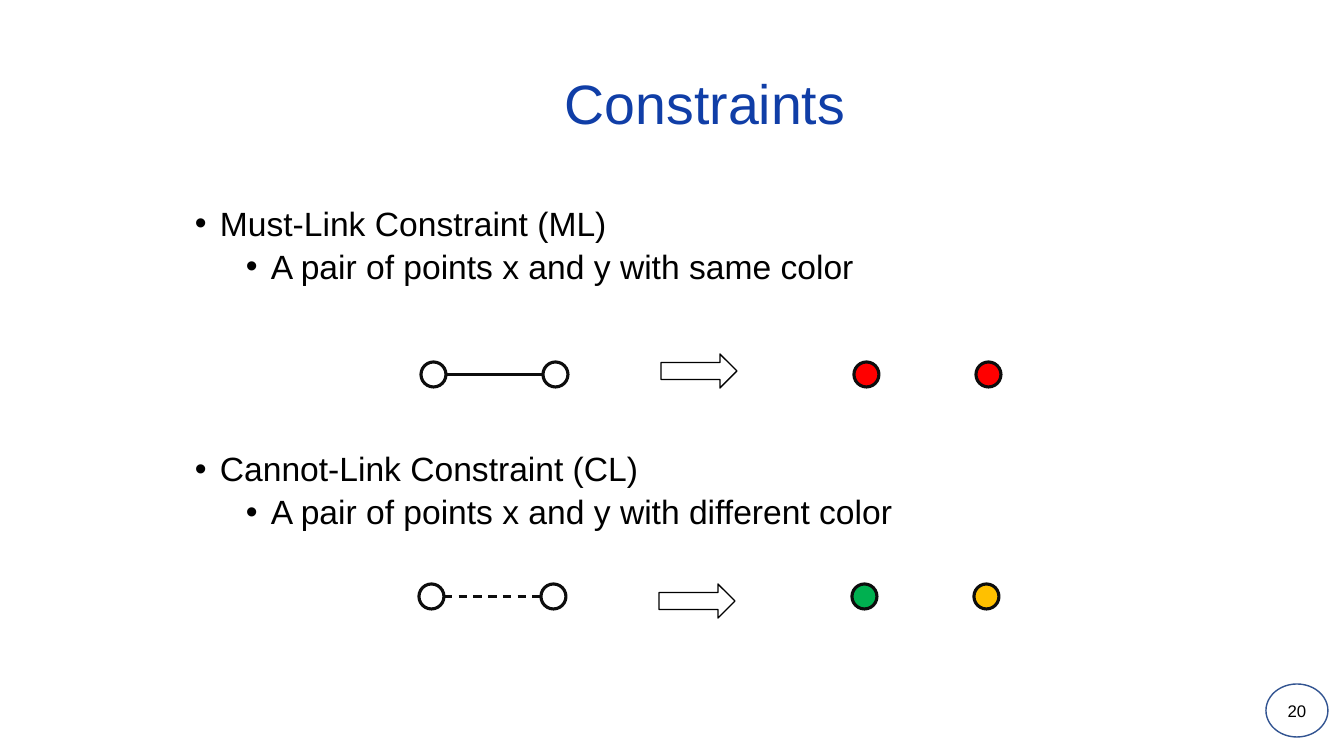
from lxml import etree
from pptx import Presentation
from pptx.dml.color import RGBColor
from pptx.enum.dml import MSO_LINE
from pptx.enum.shapes import MSO_CONNECTOR, MSO_SHAPE
from pptx.enum.text import MSO_ANCHOR, MSO_AUTO_SIZE, PP_ALIGN
from pptx.oxml.ns import qn
from pptx.util import Emu, Pt

ELLIPSE = MSO_SHAPE.OVAL
ARROW = MSO_SHAPE.RIGHT_ARROW
STRAIGHT = MSO_CONNECTOR.STRAIGHT
DASH = MSO_LINE.DASH
MIDDLE = MSO_ANCHOR.MIDDLE
CENTER = PP_ALIGN.CENTER
LEFT = PP_ALIGN.LEFT
FIXED_SIZE = MSO_AUTO_SIZE.NONE

PIXELS_PER_INCH = 100.8
BLACK = "000000"
WHITE = "FFFFFF"
OUTLINE = "0D0D0D"
POINT_SIZE = 25
POINT_PITCH = 122


def px(length):
    return Emu(round(length * 914400 / PIXELS_PER_INCH))


def color(value):
    return RGBColor.from_string(value)


def add_bullet(paragraph, indent):
    properties = paragraph._p.get_or_add_pPr()
    properties.set("marL", str(px(indent)))
    properties.set("indent", str(-px(25)))
    etree.SubElement(properties, qn("a:buFont")).set("typeface", "Arial")
    etree.SubElement(properties, qn("a:buChar")).set("char", "•")


def write(paragraph, text, size=24, fill=BLACK, align=LEFT, before=0, spacing=0.9, indent=None):
    paragraph.alignment = align
    paragraph.line_spacing = spacing
    paragraph.space_before = Pt(before)
    if indent is not None:
        add_bullet(paragraph, indent)
    run = paragraph.add_run()
    run.text = text
    run.font.name = "Arial"
    run.font.size = Pt(size)
    run.font.color.rgb = color(fill)


def add_outlined(slide, kind, box, fill=None, line=OUTLINE, width=2.25):
    shape = slide.shapes.add_shape(kind, *map(px, box))
    shape.shadow.inherit = False
    if fill:
        shape.fill.solid()
        shape.fill.fore_color.rgb = color(fill)
    else:
        shape.fill.background()
    shape.line.color.rgb = color(line)
    shape.line.width = Pt(width)
    return shape


def add_title(slide, box, text):
    title = slide.shapes.title
    title.left, title.top, title.width, title.height = map(px, box)
    frame = title.text_frame
    frame.auto_size = FIXED_SIZE
    frame.vertical_anchor = MIDDLE
    write(frame.paragraphs[0], text, size=39.6, fill="103EA7", align=CENTER)


def add_definitions(slide, box, definitions):
    frame = slide.shapes.add_textbox(*map(px, box)).text_frame
    frame.word_wrap = True
    for index, (name, meaning) in enumerate(definitions):
        heading = frame.add_paragraph() if index else frame.paragraphs[0]
        write(heading, name, indent=25, before=118.5 if index else 0)
        detail = frame.add_paragraph()
        detail.level = 1
        write(detail, meaning, indent=76, before=5)


def add_pair(slide, left, top, fills):
    for index, fill in enumerate(fills):
        box = (left + index * POINT_PITCH, top, POINT_SIZE, POINT_SIZE)
        add_outlined(slide, ELLIPSE, box, fill)


def add_link(slide, left, top, dash):
    middle = top + POINT_SIZE / 2
    link = slide.shapes.add_connector(
        STRAIGHT, px(left + POINT_SIZE), px(middle), px(left + POINT_PITCH), px(middle))
    link.line.color.rgb = color(OUTLINE)
    link.line.width = Pt(1.5)
    if dash:
        link.line.dash_style = dash
    etree.SubElement(link._element.spPr, qn("a:effectLst"))


def add_constraint_diagram(slide, left, top, arrow_shift, fills, dash=None):
    add_pair(slide, left, top, (WHITE, WHITE))
    add_link(slide, left, top, dash)
    add_outlined(slide, ARROW, (left + 240, top + arrow_shift, 76, 34), line=BLACK, width=1)
    add_pair(slide, left + 433, top, fills)


def add_page_number(slide, box, number):
    badge = add_outlined(slide, ELLIPSE, box, WHITE, "325491", 1)
    frame = badge.text_frame
    frame.vertical_anchor = MIDDLE
    write(frame.paragraphs[0], number, size=12, align=CENTER, spacing=1)


def main():
    presentation = Presentation()
    presentation.slide_width = px(1344)
    presentation.slide_height = px(756)
    slide = presentation.slides.add_slide(presentation.slide_layouts[5])
    add_title(slide, (269, 76, 872, 62), "Constraints")
    add_definitions(slide, (185, 202, 1066, 480), [
        ("Must-Link Constraint (ML)", "A pair of points x and y with same color"),
        ("Cannot-Link Constraint (CL)", "A pair of points x and y with different color"),
    ])
    add_constraint_diagram(slide, 421, 362, -8, ("FF0000", "FF0000"))
    add_constraint_diagram(slide, 419, 584, 0, ("00B050", "FFC000"), DASH)
    add_page_number(slide, (1266, 684, 62, 53), "20")
    presentation.save("out.pptx")


if __name__ == "__main__":
    main()
